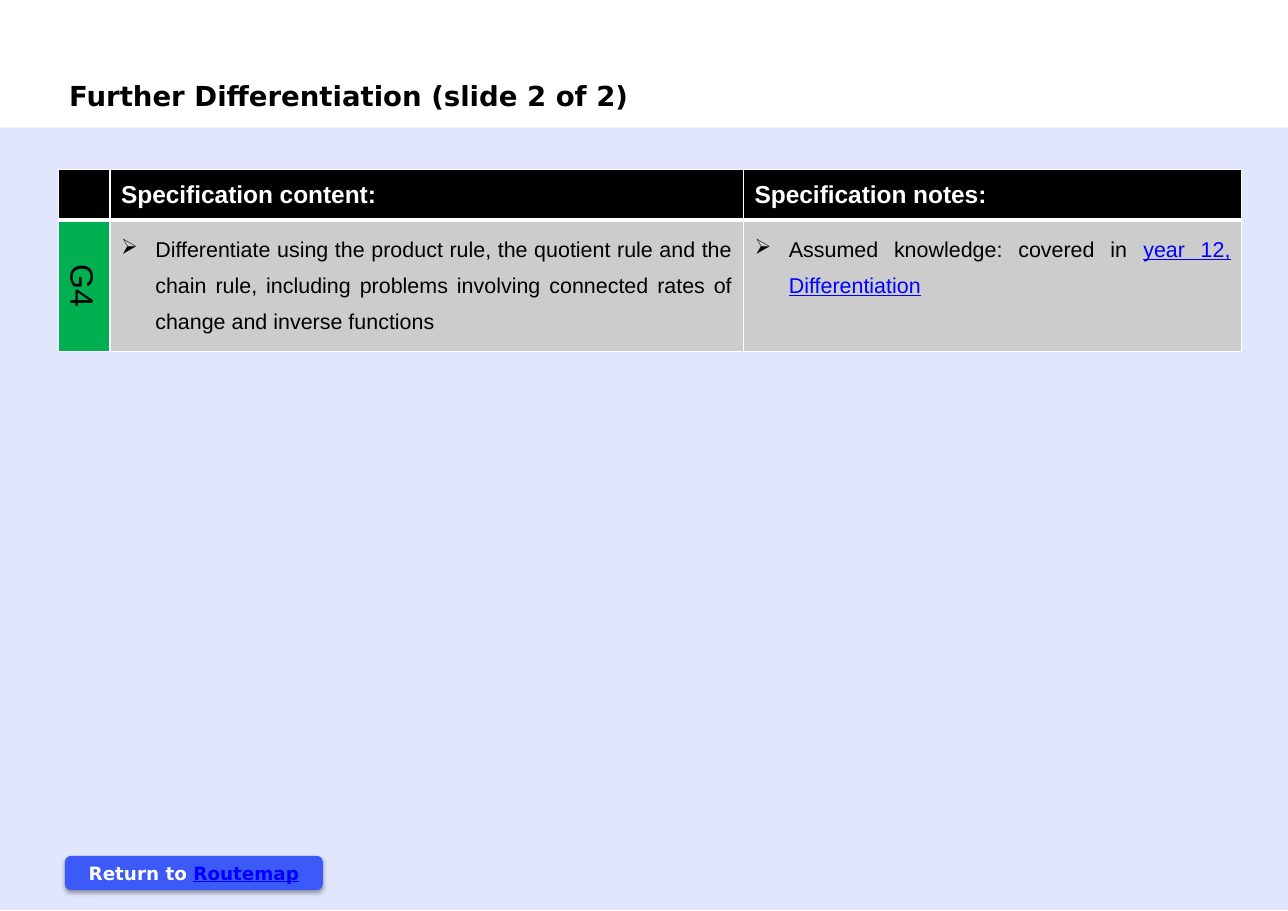
from lxml import etree
from pptx import Presentation
from pptx.dml.color import RGBColor
from pptx.enum.shapes import MSO_SHAPE as Preset
from pptx.enum.text import MSO_ANCHOR as Anchor, MSO_AUTO_SIZE as AutoSize, PP_ALIGN as Align
from pptx.oxml import parse_xml
from pptx.oxml.ns import nsdecls, qn
from pptx.util import Inches, Pt

BLACK, WHITE, BLUE, LINK = "000000", "FFFFFF", "3B5AF7", "0000FF"
GREEN, GREY = "00B050", "CCCCCC"
HEADING_FONT, BODY_FONT = "DejaVu Sans", "Arial"
COLUMN_WIDTHS = (0.47, 5.75, 4.52)
ROW_HEIGHTS = (0.46, 1.19)
HEADERS = ("", "Specification content:", "Specification notes:")
CONTENT = (
    "Differentiate using the product rule, the quotient rule and the chain rule, "
    "including problems involving connected rates of change and inverse functions"
)


def color(hex_value):
    return RGBColor.from_string(hex_value)


def add_run(paragraph, text, size, font=BODY_FONT, fill=BLACK, bold=False, underline=False):
    run = paragraph.add_run()
    run.text = text
    run.font.size = Pt(size)
    run.font.name = font
    run.font.bold = bold
    run.font.underline = underline
    run.font.color.rgb = color(fill)


def add_panel(slide, preset, left, top, width, height):
    shape = slide.shapes.add_shape(
        preset, Inches(left), Inches(top), Inches(width), Inches(height)
    )
    shape.shadow.inherit = False
    shape.fill.solid()
    shape.fill.fore_color.rgb = color(BLUE)
    shape.line.fill.background()
    return shape


def add_background(slide):
    """Tint everything below the title with a mostly transparent blue."""
    panel = add_panel(slide, Preset.RECTANGLE, 0, 1.16, 11.69, 7.1)
    tint = panel.fill._xPr.find(qn("a:solidFill"))[0]
    etree.SubElement(tint, qn("a:alpha"), val="15000")


def add_return_button(slide):
    button = add_panel(slide, Preset.ROUNDED_RECTANGLE, 0.59, 7.77, 2.34, 0.31)
    effects = button._element.spPr.find(qn("a:effectLst"))
    effects.append(parse_xml(
        f'<a:outerShdw {nsdecls("a")} blurRad="{Pt(3.1)}" dist="{Pt(1.8)}" dir="5400000" '
        f'rotWithShape="0"><a:srgbClr val="{BLACK}"><a:alpha val="35000"/></a:srgbClr>'
        '</a:outerShdw>'
    ))
    frame = button.text_frame
    frame.vertical_anchor = Anchor.MIDDLE
    paragraph = frame.paragraphs[0]
    paragraph.alignment = Align.CENTER
    add_run(paragraph, "Return to ", 12, HEADING_FONT, WHITE, bold=True)
    add_run(paragraph, "Routemap", 12, HEADING_FONT, LINK, bold=True, underline=True)


def add_title(slide):
    box = slide.shapes.add_textbox(Inches(0.53), Inches(0.67), Inches(5.35), Inches(0.4))
    box.text_frame.word_wrap = False
    box.text_frame.auto_size = AutoSize.SHAPE_TO_FIT_TEXT
    add_run(box.text_frame.paragraphs[0], "Further Differentiation (slide 2 of 2)",
            18, HEADING_FONT, bold=True)


def style_cell(cell, fill, top=1, bottom=1):
    """Draw white borders, with top and bottom widths in points, and fill the cell."""
    properties = cell._tc.get_or_add_tcPr()
    for side, width in (("L", 1), ("R", 1), ("T", top), ("B", bottom)):
        line = etree.SubElement(properties, qn(f"a:ln{side}"), w=str(Pt(width)))
        line_fill = etree.SubElement(line, qn("a:solidFill"))
        etree.SubElement(line_fill, qn("a:srgbClr"), val=WHITE)
    cell.fill.solid()
    cell.fill.fore_color.rgb = color(fill)
    cell.margin_left = cell.margin_right = Inches(0.1)
    cell.margin_top = cell.margin_bottom = Inches(0.05)


def start_bullet(cell):
    paragraph = cell.text_frame.paragraphs[0]
    properties = paragraph._p.get_or_add_pPr()
    properties.set("marL", str(Inches(0.31)))
    properties.set("indent", str(-Inches(0.31)))
    etree.SubElement(properties, qn("a:buChar"), char="➢")
    paragraph.alignment = Align.JUSTIFY
    paragraph.line_spacing = 1.5
    return paragraph


def add_specification_table(slide):
    table = slide.shapes.add_table(
        len(ROW_HEIGHTS), len(COLUMN_WIDTHS), Inches(0.53), Inches(1.54),
        Inches(sum(COLUMN_WIDTHS)), Inches(sum(ROW_HEIGHTS))
    ).table
    for column, width in zip(table.columns, COLUMN_WIDTHS):
        column.width = Inches(width)
    for row, height in zip(table.rows, ROW_HEIGHTS):
        row.height = Inches(height)

    for index, (header, fill) in enumerate(zip(HEADERS, (GREEN, GREY, GREY))):
        header_cell = table.cell(0, index)
        style_cell(header_cell, BLACK, bottom=3)
        header_cell.vertical_anchor = Anchor.MIDDLE
        if header:
            add_run(header_cell.text_frame.paragraphs[0], header, 16, fill=WHITE, bold=True)
        style_cell(table.cell(1, index), fill, top=3)

    code, content, notes = (table.cell(1, index) for index in range(3))
    code._tc.get_or_add_tcPr().set("vert", "vert")
    code_paragraph = code.text_frame.paragraphs[0]
    code_paragraph.alignment = Align.CENTER
    add_run(code_paragraph, "G4", 21)
    add_run(start_bullet(content), CONTENT, 14)
    notes_paragraph = start_bullet(notes)
    add_run(notes_paragraph, "Assumed knowledge: covered in ", 14)
    add_run(notes_paragraph, "year 12, Differentiation", 14, fill=LINK, underline=True)


def main():
    presentation = Presentation()
    presentation.slide_width = Inches(11.69)
    presentation.slide_height = Inches(8.27)
    slide = presentation.slides.add_slide(presentation.slide_layouts[6])
    add_background(slide)
    add_return_button(slide)
    add_specification_table(slide)
    add_title(slide)
    presentation.save("out.pptx")


if __name__ == "__main__":
    main()
